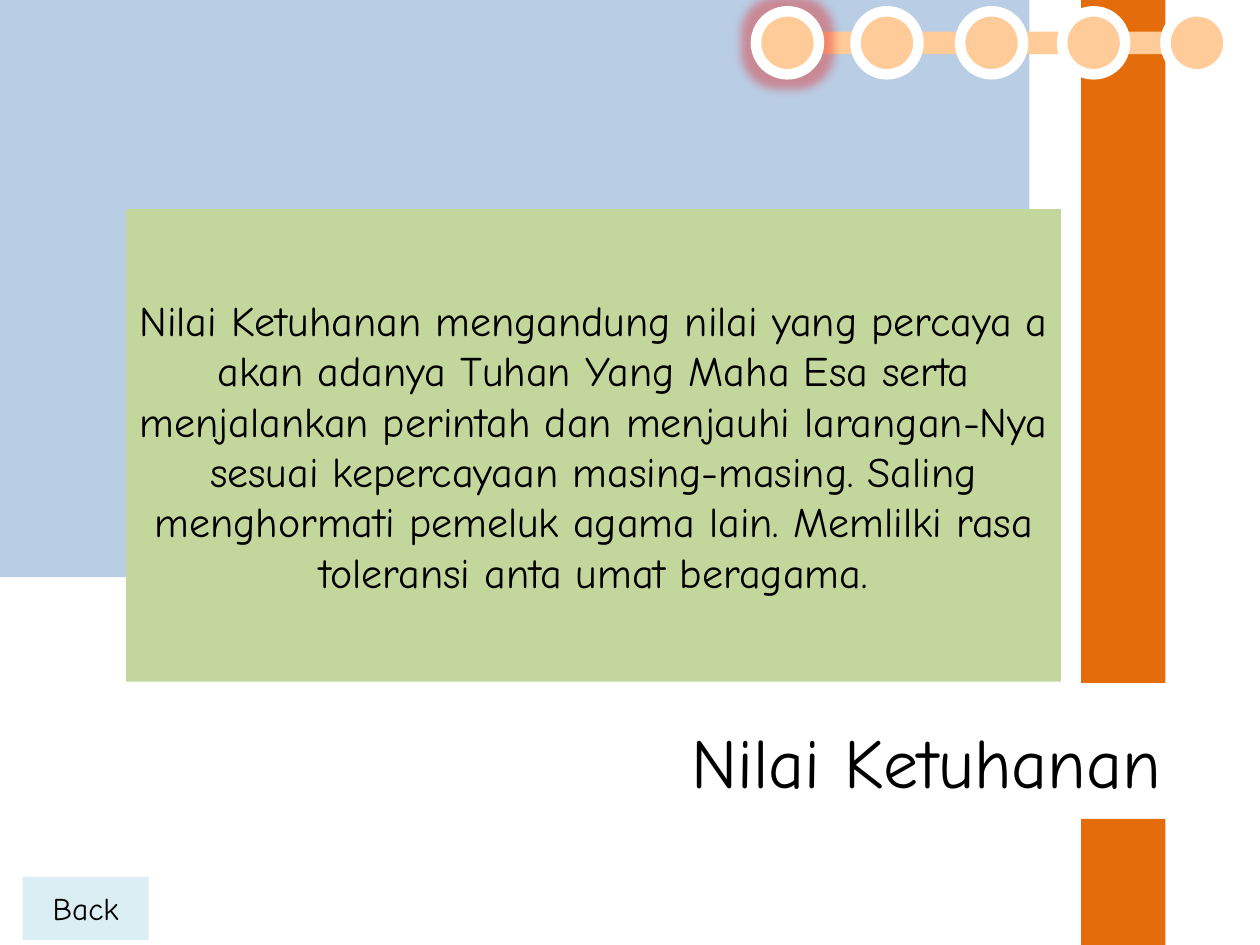
"""Build the "Nilai Ketuhanan" slide with its colour panels and progress dots."""
import pptx
import pptx.util
import pptx.dml.color
import pptx.enum.shapes
import pptx.enum.text
import pptx.oxml.ns
import lxml.etree

Inches, Pt = pptx.util.Inches, pptx.util.Pt
SHAPE = pptx.enum.shapes.MSO_SHAPE
ALIGN = pptx.enum.text.PP_ALIGN
FONT = "Comic Neue"
COLOURS = {"blue": "B9CDE5", "orange": "E46C0A", "green": "C3D69B", "ice": "DBEEF4",
           "peach": "FFCC99", "white": "FFFFFF", "black": "000000", "glow": "E2231E"}


def rgb(name):
    return pptx.dml.color.RGBColor.from_string(COLOURS[name])


def add_block(kind, box, fill, text="", size=18):
    block = slide.shapes.add_shape(kind, *[Inches(length) for length in box])
    block.shadow.inherit = False
    block.fill.solid()
    block.fill.fore_color.rgb = rgb(fill)
    block.line.fill.background()
    if text:
        block.text_frame.word_wrap = True
        block.text_frame.vertical_anchor = pptx.enum.text.MSO_ANCHOR.MIDDLE
        paragraph = block.text_frame.paragraphs[0]
        paragraph.text = text
        paragraph.alignment = ALIGN.CENTER
        paragraph.font.name = FONT
        paragraph.font.size = Pt(size)
        paragraph.font.color.rgb = rgb("black")
    return block


deck = pptx.Presentation()
deck.slide_width, deck.slide_height = Inches(10), Inches(7.5)
slide = deck.slides.add_slide(deck.slide_layouts[5])

heading = slide.shapes.title
heading.left, heading.top = Inches(1.53), Inches(5.62)
heading.width, heading.height = Inches(7.97), Inches(0.83)
heading.text_frame.vertical_anchor = pptx.enum.text.MSO_ANCHOR.MIDDLE
heading_line = heading.text_frame.paragraphs[0]
heading_line.text = "Nilai Ketuhanan "
heading_line.alignment = ALIGN.RIGHT
heading_line.font.name = FONT
heading_line.font.size = Pt(40)
heading_line.font.color.rgb = rgb("black")

explanation = (
    "Nilai Ketuhanan mengandung nilai yang percaya a akan adanya Tuhan Yang Maha Esa "
    "serta menjalankan perintah dan menjauhi larangan-Nya sesuai kepercayaan "
    "masing-masing. Saling menghormati pemeluk agama lain. Memlilki rasa toleransi "
    "anta umat beragama."
)
backdrop = add_block(SHAPE.RECTANGLE, (0, 0, 8.17, 4.58), "blue")
slide.shapes._spTree.insert(2, backdrop._element)
for top, height in ((6.5, 1), (0, 5.42)):
    add_block(SHAPE.RECTANGLE, (8.58, top, 0.67, height), "orange")
add_block(SHAPE.RECTANGLE, (1, 1.66, 7.42, 3.75), "green", explanation, 24)
add_block(SHAPE.RECTANGLE, (0.18, 6.96, 1, 0.5), "ice", "Back")
add_block(SHAPE.RECTANGLE, (6, 0.25, 3.75, 0.18), "peach")

current_left = 6
for left in (8.43, 9.25, 7.62, current_left, 6.79):
    dot = add_block(SHAPE.OVAL, (left, 0.09, 0.5, 0.5), "peach")
    dot.line.color.rgb = rgb("white")
    dot.line.width = Pt(6)
    if left == current_left:
        qn = pptx.oxml.ns.qn
        effects = dot._element.spPr.find(qn("a:effectLst"))
        glow = lxml.etree.SubElement(effects, qn("a:glow"), rad=str(Pt(11)))
        tint = lxml.etree.SubElement(glow, qn("a:srgbClr"), val=COLOURS["glow"])
        lxml.etree.SubElement(tint, qn("a:alpha"), val="40000")

deck.save("out.pptx")
